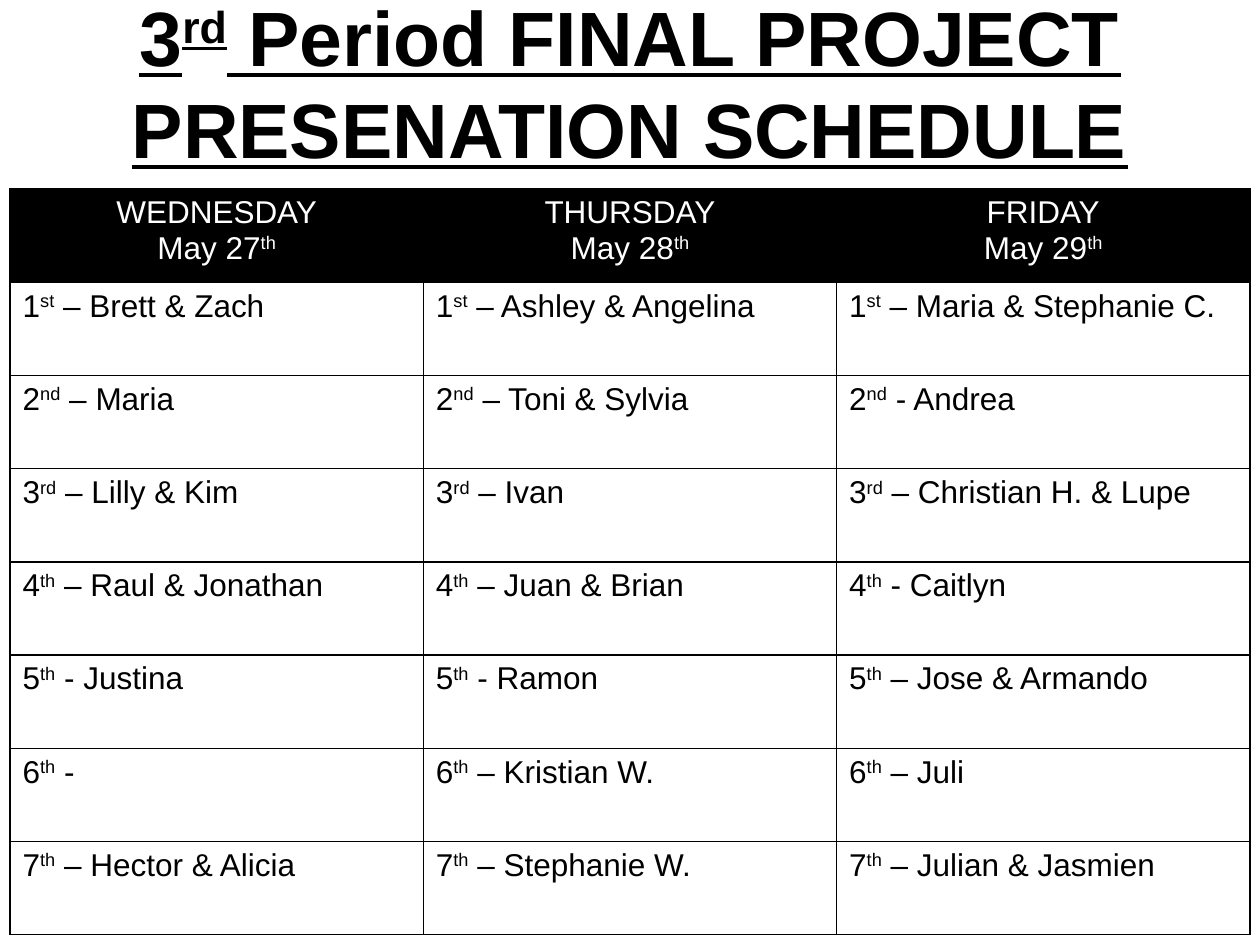
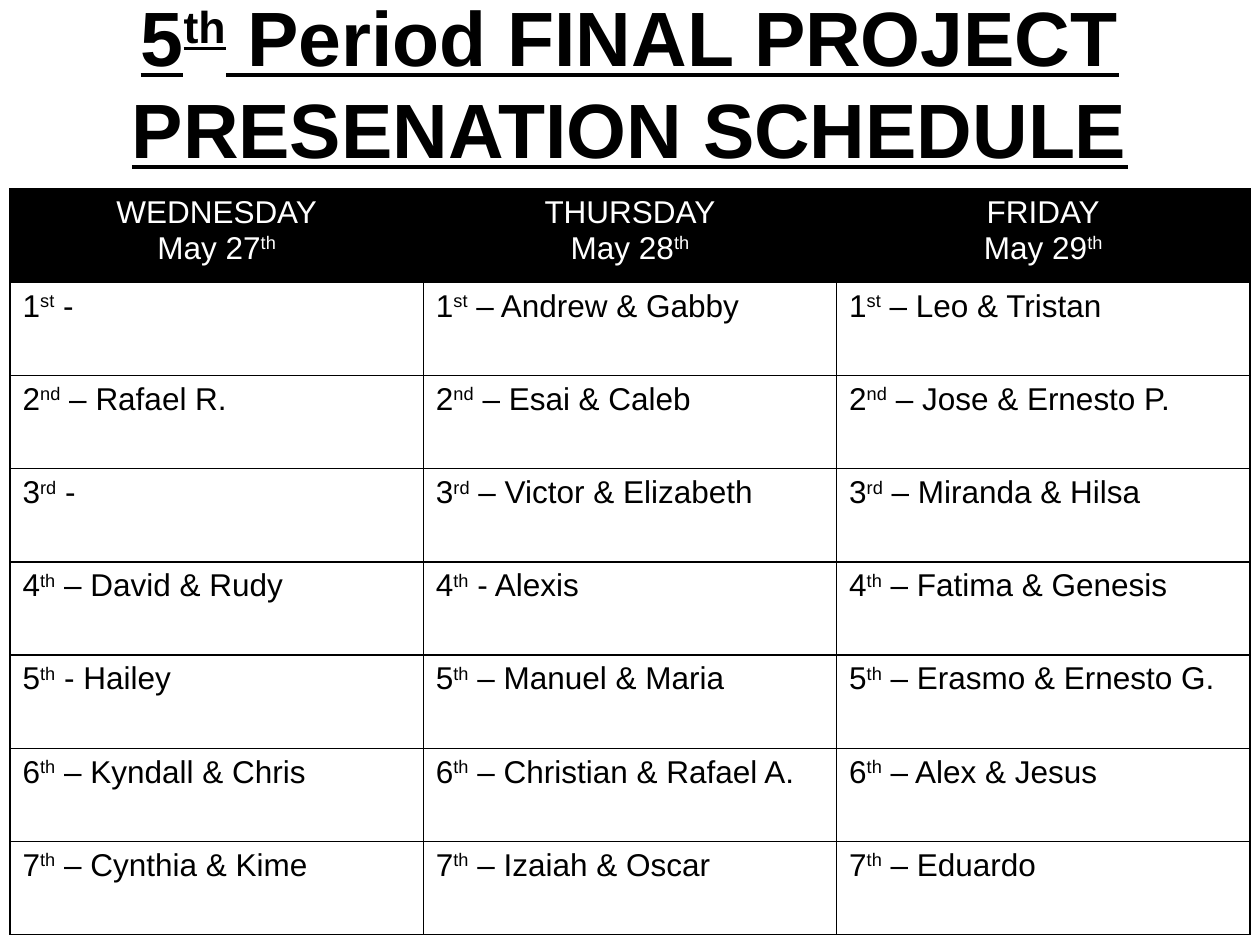
from lxml.etree import SubElement
from pptx import Presentation
from pptx.dml.color import RGBColor as RGB
from pptx.enum.text import MSO_ANCHOR as Anchor, MSO_AUTO_SIZE as AutoSize, PP_ALIGN as Align
from pptx.oxml.ns import qn
from pptx.util import Pt

PX = 9144  # EMU per px, 100 px to the inch
COLORS = {"ink": "000000", "paper": "FFFFFF"}
FONT = "Arial"
TITLE_FONT = {"name": FONT, "size": Pt(44), "bold": True, "underline": True}
CELL_FONT = {"name": FONT, "size": Pt(18), "bold": False}

SUFFIXES = ["st", "nd", "rd", "th", "th", "th", "th"]
DAYS = [("WEDNESDAY", "27"), ("THURSDAY", "28"), ("FRIDAY", "29")]

# Presenters by period; one row for each turn, one column for each day
SCHEDULES = {
    ("3", "rd"): [
        ("– Brett & Zach", "– Ashley & Angelina", "– Maria & Stephanie C."),
        ("– Maria", "– Toni & Sylvia", "- Andrea"),
        ("– Lilly & Kim", "– Ivan", "– Christian H. & Lupe"),
        ("– Raul & Jonathan", "– Juan & Brian", "- Caitlyn"),
        ("- Justina", "- Ramon", "– Jose & Armando"),
        ("-", "– Kristian W.", "– Juli"),
        ("– Hector & Alicia", "– Stephanie W.", "– Julian & Jasmien"),
    ],
    ("5", "th"): [
        ("-", "– Andrew & Gabby", "– Leo & Tristan"),
        ("– Rafael R.", "– Esai & Caleb", "– Jose & Ernesto P."),
        ("-", "– Victor & Elizabeth", "– Miranda & Hilsa"),
        ("– David & Rudy", "- Alexis", "– Fatima & Genesis"),
        ("- Hailey", "– Manuel & Maria", "– Erasmo & Ernesto G."),
        ("– Kyndall & Chris", "– Christian & Rafael A.", "– Alex & Jesus"),
        ("– Cynthia & Kime", "– Izaiah & Oscar", "– Eduardo"),
    ],
}


class Deck:
    def __init__(self, width, height):
        self.prs = Presentation()
        self.prs.slide_width, self.prs.slide_height = width * PX, height * PX
        self.s = None

    def slide(self):
        self.s = self.prs.slides.add_slide(self.prs.slide_layouts[5])

    def text(self, tf, lines, font, color, align):
        """Each line is (text, superscript, text); the last two may be left out."""
        for i, line in enumerate(lines):
            p = tf.paragraphs[0] if i == 0 else tf.add_paragraph()
            p.alignment = align
            for j, words in enumerate(line):
                r = p.add_run()
                r.text = words
                for name, value in font.items():
                    setattr(r.font, name, value)
                r.font.color.rgb = RGB.from_string(COLORS[color])
                if j == 1:
                    r.font._element.set("baseline", "30000")

    def title(self, lines, x, y, w, h):
        sp = self.s.shapes.title
        sp.left, sp.top, sp.width, sp.height = (v * PX for v in (x, y, w, h))
        tf = sp.text_frame
        tf.auto_size, tf.vertical_anchor, tf.word_wrap = AutoSize.NONE, Anchor.MIDDLE, True
        self.text(tf, lines, TITLE_FONT, "ink", Align.CENTER)

    def border(self, cell):
        tcPr = cell._tc.get_or_add_tcPr()
        for side in ("a:lnL", "a:lnR", "a:lnT", "a:lnB"):
            ln = SubElement(tcPr, qn(side), w=str(Pt(1)))
            fill = SubElement(ln, qn("a:solidFill"))
            SubElement(fill, qn("a:srgbClr"), val=COLORS["ink"])

    def table(self, rows, x, y, col_w, row_h):
        n_rows, n_cols = len(rows), len(rows[0])
        size = (x, y, n_cols * col_w, n_rows * row_h)
        tbl = self.s.shapes.add_table(n_rows, n_cols, *(v * PX for v in size)).table
        tbl.horz_banding = False
        for i, row in enumerate(rows):
            for j, lines in enumerate(row):
                cell = tbl.cell(i, j)
                self.border(cell)
                if i == 0:
                    cell.fill.solid()
                    cell.fill.fore_color.rgb = RGB.from_string(COLORS["ink"])
                    self.text(cell.text_frame, lines, CELL_FONT, "paper", Align.CENTER)
                else:
                    cell.fill.background()
                    self.text(cell.text_frame, lines, CELL_FONT, "ink", Align.LEFT)


def main():
    deck = Deck(1000, 750)
    header = [[(day,), (f"May {date}", "th")] for day, date in DAYS]
    for (period, suffix), turns in SCHEDULES.items():
        deck.slide()
        # Title
        deck.title([(period, suffix, " Period FINAL PROJECT"), ("PRESENATION SCHEDULE",)],
                   0, 30, 1000, 70)
        # Schedule: a header row, then one row for each turn
        body = [[[(str(n), SUFFIXES[n - 1], f" {who}")] for who in row]
                for n, row in enumerate(turns, 1)]
        deck.table([header] + body, 8, 150, 328, 74)
    deck.prs.save("out.pptx")


if __name__ == "__main__":
    main()
